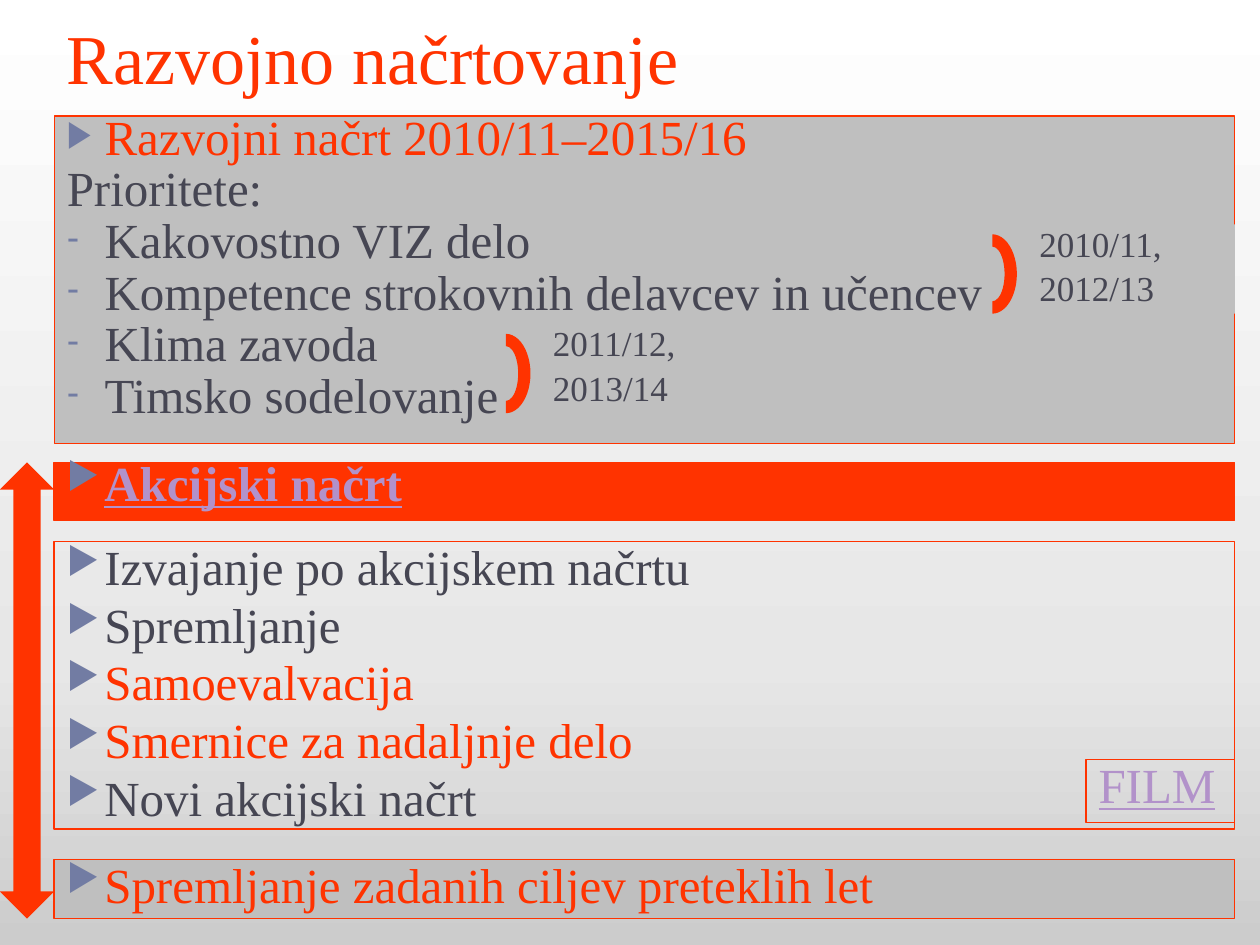
from copy import deepcopy

from lxml import etree
from pptx import Presentation
from pptx.dml.color import RGBColor
from pptx.enum.shapes import MSO_SHAPE
from pptx.enum.text import MSO_ANCHOR, MSO_AUTO_SIZE, PP_ALIGN
from pptx.oxml.ns import qn
from pptx.util import Inches, Pt

RECTANGLE = MSO_SHAPE.RECTANGLE
BLOCK_ARC = MSO_SHAPE.BLOCK_ARC
UP_DOWN_ARROW = MSO_SHAPE.UP_DOWN_ARROW
TOP, BOTTOM = MSO_ANCHOR.TOP, MSO_ANCHOR.BOTTOM
LEFT = PP_ALIGN.LEFT
NO_AUTOFIT = MSO_AUTO_SIZE.NONE

FONT = "Times New Roman"
RED, DARK, GREY = "FF3300", "464653", "BFBFBF"
LINK, BULLET = "B292CA", "727CA3"
ARROW, DASH = "▶", "-"

MARGIN = 0.43
PANEL_WIDTH = 9.37
ACTION_TOP = 3.67
FOLLOW_UP_TOP, FOLLOW_UP_HEIGHT = 6.82, 0.47
NOTE_WIDTH, NOTE_HEIGHT = 1.65, 0.71
ARC_WIDTH, ARC_HEIGHT = 0.63, 0.39


def color(hex_string):
    return RGBColor.from_string(hex_string)


def place(shape, left, top, width, height):
    shape.left, shape.top = Inches(left), Inches(top)
    shape.width, shape.height = Inches(width), Inches(height)


def paint(shape, fill=None, line=None):
    if fill:
        shape.fill.solid()
        shape.fill.fore_color.rgb = color(fill)
    else:
        shape.fill.background()
    if line:
        shape.line.color.rgb = color(line)
        shape.line.width = Pt(0.75)
    else:
        shape.line.fill.background()


def add_shape(slide, kind, box, fill=None, line=None):
    shape = slide.shapes.add_shape(kind, *map(Inches, box))
    shape.shadow.inherit = False
    paint(shape, fill, line)
    return shape


def set_bullet(paragraph, character):
    """Give the paragraph a hanging indent and a bullet, or none."""
    properties = paragraph._p.get_or_add_pPr()
    properties.set("marL", str(Inches(0.3)))
    properties.set("indent", str(Inches(-0.3)))
    if not character:
        etree.SubElement(properties, qn("a:buNone"))
        return
    bullet_color = etree.SubElement(properties, qn("a:buClr"))
    etree.SubElement(bullet_color, qn("a:srgbClr"), val=BULLET)
    etree.SubElement(properties, qn("a:buSzPct"), val="76000")
    etree.SubElement(properties, qn("a:buChar"), char=character)


def style_font(paragraph, size, hex_color):
    paragraph.font.name = FONT
    paragraph.font.size = Pt(size)
    paragraph.font.color.rgb = color(hex_color)


def write_list(shape, items, spacing=0.8, size=28):
    """Fill the shape with (text, colour, bullet) items."""
    frame = shape.text_frame
    frame.word_wrap = True
    frame.auto_size = NO_AUTOFIT
    frame.vertical_anchor = TOP
    for index, (text, hex_color, bullet) in enumerate(items):
        paragraph = frame.add_paragraph() if index else frame.paragraphs[0]
        paragraph.text = text
        paragraph.alignment = LEFT
        paragraph.line_spacing = spacing
        paragraph.space_before = Pt(6)
        set_bullet(paragraph, bullet)
        style_font(paragraph, size, hex_color)
    return frame.paragraphs


def set_background(slide):
    fill = slide.background.fill
    fill.gradient()
    fill.gradient_angle = 90
    stop_list = slide.element.find(".//" + qn("a:gsLst"))
    stop_list.append(deepcopy(stop_list[-1]))
    stops = [(0, "CCCCCC"), (0.3, "E7E7E7"), (1, "FFFFFF")]
    for stop, (position, hex_color) in zip(fill.gradient_stops, stops):
        stop.position = position
        stop.color.rgb = color(hex_color)


def add_title(slide, text):
    title = slide.shapes.title
    place(title, MARGIN, 0, 9.07, 0.83)
    title.text_frame.text = text
    title.text_frame.auto_size = NO_AUTOFIT
    title.text_frame.vertical_anchor = BOTTOM
    paragraph = title.text_frame.paragraphs[0]
    paragraph.alignment = LEFT
    style_font(paragraph, 40, RED)


def add_panel(slide, top, height, items, fill=None, spacing=0.8):
    panel = add_shape(slide, RECTANGLE, (MARGIN, top, PANEL_WIDTH, height), fill, RED)
    return write_list(panel, items, spacing)


def add_priorities(slide):
    body = slide.placeholders[1]
    place(body, MARGIN, 0.92, PANEL_WIDTH, 2.6)
    paint(body, GREY, RED)
    priorities = ["Kakovostno VIZ delo", "Kompetence strokovnih delavcev in učencev",
                  "Klima zavoda", "Timsko sodelovanje"]
    write_list(body, [
        ("Razvojni načrt 2010/11–2015/16", RED, ARROW),
        ("Prioritete:", DARK, None),
        *[(priority, DARK, DASH) for priority in priorities],
    ], spacing=0.7)


def add_years(slide, left, top, years):
    """Add a closing arc with the school years to its right."""
    arc_box = (left, top, ARC_WIDTH, ARC_HEIGHT)
    add_shape(slide, BLOCK_ARC, arc_box, RED).rotation = 90
    note_box = (left + 0.59, top - 0.2, NOTE_WIDTH, NOTE_HEIGHT)
    note = add_shape(slide, RECTANGLE, note_box, GREY)
    write_list(note, [(year, DARK, None) for year in years], size=20)


def main():
    presentation = Presentation()
    presentation.slide_width, presentation.slide_height = Inches(10), Inches(7.5)
    slide = presentation.slides.add_slide(presentation.slide_layouts[1])
    set_background(slide)
    add_title(slide, "Razvojno načrtovanje")
    add_priorities(slide)

    add_panel(slide, 4.3, 2.28, [
        ("Izvajanje po akcijskem načrtu", DARK, ARROW),
        ("Spremljanje", DARK, ARROW),
        ("Samoevalvacija", RED, ARROW),
        ("Smernice za nadaljnje delo", RED, ARROW),
        ("Novi akcijski načrt", DARK, ARROW),
    ])
    add_panel(slide, FOLLOW_UP_TOP, FOLLOW_UP_HEIGHT,
              [("Spremljanje zadanih ciljev preteklih let", RED, ARROW)], GREY)
    cycle_height = FOLLOW_UP_TOP + FOLLOW_UP_HEIGHT - ACTION_TOP
    add_shape(slide, UP_DOWN_ARROW, (0, ACTION_TOP, MARGIN, cycle_height), RED)

    action = add_panel(slide, ACTION_TOP, 0.46,
                       [("Akcijski načrt", LINK, ARROW)], RED, spacing=0.7)[0]
    action.space_after = Pt(6)
    action.font.bold = action.font.underline = True

    add_years(slide, 7.56, 1.98, ["2010/11,", "2012/13"])
    add_years(slide, 3.7, 2.77, ["2011/12,", "2013/14"])

    film = add_shape(slide, RECTANGLE, (8.62, 6.03, 1.18, 0.5), line=RED)
    write_list(film, [("FILM", LINK, None)])[0].font.underline = True

    presentation.save("out.pptx")


if __name__ == "__main__":
    main()
